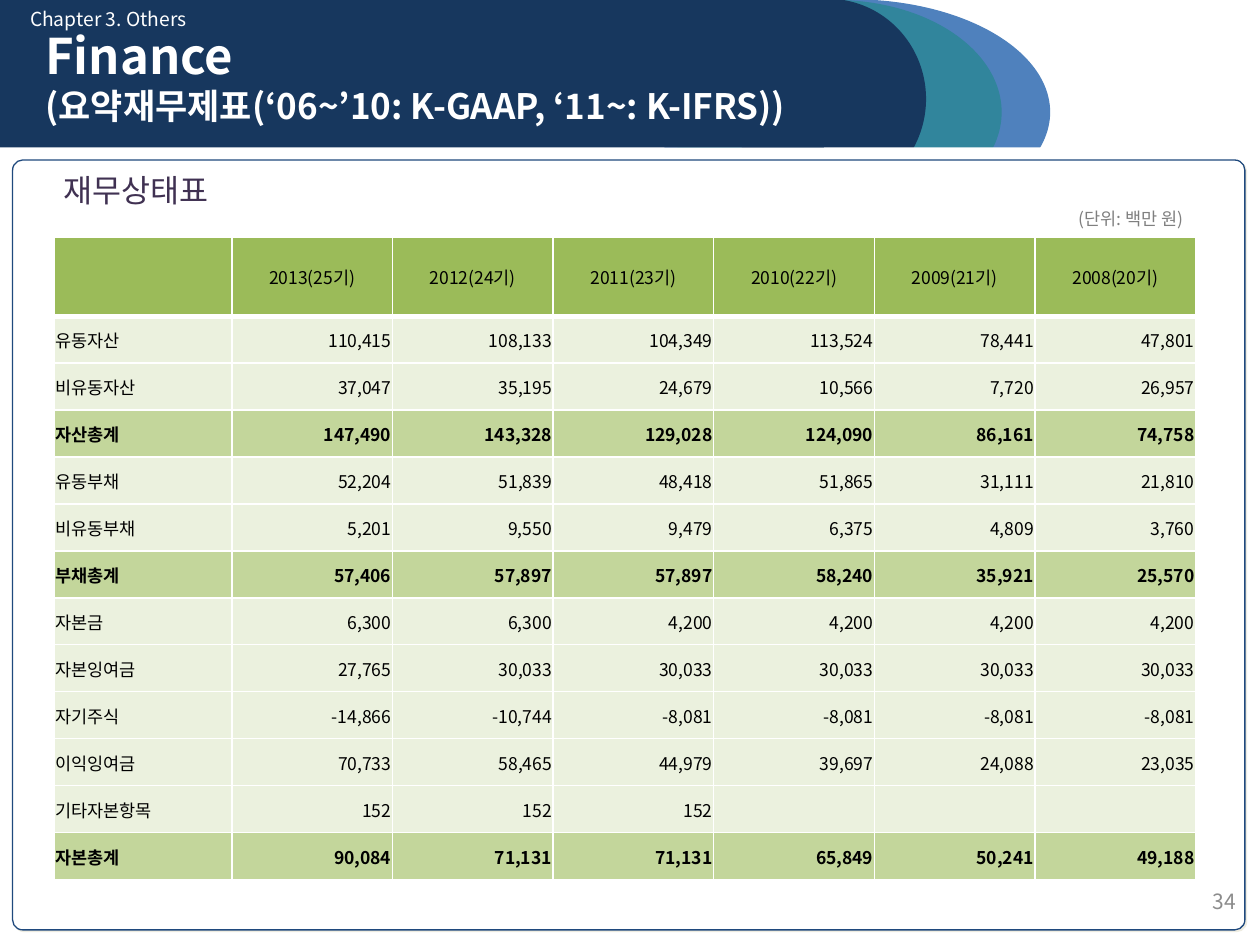
from typing import NamedTuple

from lxml.etree import SubElement
from pptx import Presentation
from pptx.dml.color import RGBColor
from pptx.enum.shapes import MSO_SHAPE as Shape
from pptx.enum.text import MSO_ANCHOR as Anchor, MSO_AUTO_SIZE as AutoSize, PP_ALIGN as Align
from pptx.oxml.ns import qn
from pptx.util import Inches, Pt

FONT = "Noto Sans CJK KR"
LABEL_FONT = "Arial"
COLORS = {
    "navy": "17375E", "teal": "31859C", "blue": "4F81BD", "frame": "1F497D",
    "shadow": "EEECE1", "white": "FFFFFF", "black": "000000", "purple": "403152",
    "gray": "7F7F7F", "page": "8C8C8C",
    "header": "9BBB59", "row": "EBF1DE", "total": "C3D69B",
}


class Box(NamedTuple):
    left: float
    top: float
    width: float
    height: float

    def lengths(self) -> list:
        return [Inches(value) for value in self]


class Panel(NamedTuple):
    kind: Shape
    box: Box
    fill: str
    line: str | None = None


class Run(NamedTuple):
    text: str
    size: float
    color: str = "black"
    bold: bool = False
    font: str = FONT


class Label(NamedTuple):
    box: Box
    run: Run
    align: Align = Align.LEFT
    anchor: Anchor = Anchor.TOP
    wrap: bool = True


BACKDROP = [
    Panel(Shape.OVAL, Box(5.2, 0, 3.13, 1.78), "blue", "blue"),
    Panel(Shape.OVAL, Box(5.31, 0, 2.64, 1.78), "teal"),
    Panel(Shape.OVAL, Box(5.79, -0.01, 1.56, 1.59), "navy"),
    Panel(Shape.RECTANGLE, Box(0, 1.17, 10, 0.93), "white"),
    Panel(Shape.RECTANGLE, Box(0, 0, 6.54, 1.17), "navy"),
]
FRAME = Panel(Shape.ROUNDED_RECTANGLE, Box(0.1, 1.27, 9.78, 6.11), "white", "frame")

TITLE_BOX = Box(0.26, 0.15, 7.87, 1.25)
TITLE_RUNS = [
    Run("Finance", 28, "white", True),
    Run("(요약재무제표(‘06~’10: K-GAAP, ‘11~: K-IFRS))", 20, "white", True),
]
LABELS = [
    Label(Box(0.41, 1.31, 1.46, 0.4), Run("재무상태표", 18, "purple"), wrap=False),
    Label(Box(7.58, 6.95, 2.33, 0.4), Run("34", 12, "page"), Align.RIGHT, Anchor.MIDDLE),
    Label(Box(0.14, 0.01, 3.6, 0.29), Run("Chapter 3. Others", 11, "white")),
]

TABLE_BOX = Box(0.43, 1.34, 9.06, 5.64)
LABEL_WIDTH, UNIT_HEIGHT, HEADER_HEIGHT = 1.41, 0.54, 0.63
UNIT = "(단위: 백만 원)"
HEADER = ["", *(f"{year}({year - 1988}기)" for year in range(2013, 2007, -1))]
BALANCE_SHEET = [
    ["유동자산", "110,415", "108,133", "104,349", "113,524", "78,441", "47,801"],
    ["비유동자산", "37,047", "35,195", "24,679", "10,566", "7,720", "26,957"],
    ["자산총계", "147,490", "143,328", "129,028", "124,090", "86,161", "74,758"],
    ["유동부채", "52,204", "51,839", "48,418", "51,865", "31,111", "21,810"],
    ["비유동부채", "5,201", "9,550", "9,479", "6,375", "4,809", "3,760"],
    ["부채총계", "57,406", "57,897", "57,897", "58,240", "35,921", "25,570"],
    ["자본금", "6,300", "6,300", "4,200", "4,200", "4,200", "4,200"],
    ["자본잉여금", "27,765", "30,033", "30,033", "30,033", "30,033", "30,033"],
    ["자기주식", "-14,866", "-10,744", "-8,081", "-8,081", "-8,081", "-8,081"],
    ["이익잉여금", "70,733", "58,465", "44,979", "39,697", "24,088", "23,035"],
    ["기타자본항목", "152", "152", "152", "", "", ""],
    ["자본총계", "90,084", "71,131", "71,131", "65,849", "50,241", "49,188"],
]


def rgb(name: str) -> RGBColor:
    return RGBColor.from_string(COLORS[name])


def write_run(paragraph, content: Run, align: Align) -> None:
    paragraph.alignment = align
    run = paragraph.add_run()
    run.text = content.text
    formats = {"name": content.font, "size": Pt(content.size), "bold": content.bold}
    for name, value in formats.items():
        setattr(run.font, name, value)
    run.font.color.rgb = rgb(content.color)
    SubElement(run.font._element, qn("a:ea"), typeface=FONT)


def draw_panel(slide, panel: Panel):
    shape = slide.shapes.add_shape(panel.kind, *panel.box.lengths())
    shape.shadow.inherit = False
    shape.fill.solid()
    shape.fill.fore_color.rgb = rgb(panel.fill)
    if panel.line:
        shape.line.color.rgb = rgb(panel.line)
        shape.line.width = Pt(0.75)
    else:
        shape.line.fill.background()
    return shape


def draw_frame(slide) -> None:
    frame = draw_panel(slide, FRAME)
    frame.adjustments[0] = 0.013
    effects = frame.element.spPr.find(qn("a:effectLst"))
    shadow = SubElement(effects, qn("a:outerShdw"), blurRad="0", dist=str(Pt(1.4)),
                        dir=str(45 * 60000), algn="ctr", rotWithShape="0")
    SubElement(shadow, qn("a:srgbClr"), val=COLORS["shadow"])


def draw_label(slide, label: Label) -> None:
    text_frame = slide.shapes.add_textbox(*label.box.lengths()).text_frame
    text_frame.word_wrap = label.wrap
    text_frame.vertical_anchor = label.anchor
    write_run(text_frame.paragraphs[0], label.run, label.align)


def draw_title(slide) -> None:
    title = slide.shapes.title
    title.element.getparent().append(title.element)  # in front of the header band
    for name, value in zip(("left", "top", "width", "height"), TITLE_BOX.lengths()):
        setattr(title, name, value)
    text_frame = title.text_frame
    formats = {"word_wrap": True, "auto_size": AutoSize.NONE, "vertical_anchor": Anchor.TOP}
    for name, value in formats.items():
        setattr(text_frame, name, value)
    write_run(text_frame.paragraphs[0], TITLE_RUNS[0], Align.LEFT)
    write_run(text_frame.add_paragraph(), TITLE_RUNS[1], Align.LEFT)


def add_borders(cell, top: float = 1, bottom: float = 1) -> None:
    properties = cell._tc.get_or_add_tcPr()
    for side, width in {"L": 1, "R": 1, "T": top, "B": bottom}.items():
        line = SubElement(properties, qn(f"a:ln{side}"), w=str(Pt(width)))
        fill = SubElement(line, qn("a:solidFill"))
        SubElement(fill, qn("a:srgbClr"), val=COLORS["white"])


def fill_cell(cell, content: Run, align: Align, fill: str) -> None:
    margins = {"margin_left": 0.01, "margin_right": 0.01, "margin_top": 0.01, "margin_bottom": 0}
    for name, value in margins.items():
        setattr(cell, name, Inches(value))
    cell.vertical_anchor = Anchor.MIDDLE
    cell.fill.solid()
    cell.fill.fore_color.rgb = rgb(fill)
    if content.text:
        write_run(cell.text_frame.paragraphs[0], content, align)


def draw_table(slide) -> None:
    row_count, column_count = len(BALANCE_SHEET) + 2, len(HEADER)
    table = slide.shapes.add_table(row_count, column_count, *TABLE_BOX.lengths()).table
    table.first_row = table.horz_banding = False
    value_width = (TABLE_BOX.width - LABEL_WIDTH) / (column_count - 1)
    for index, column in enumerate(table.columns):
        column.width = Inches(value_width if index else LABEL_WIDTH)
    body_height = (TABLE_BOX.height - UNIT_HEIGHT - HEADER_HEIGHT) / len(BALANCE_SHEET)
    heights = [UNIT_HEIGHT, HEADER_HEIGHT] + [body_height] * len(BALANCE_SHEET)
    for row, height in zip(table.rows, heights):
        row.height = Inches(height)

    # Unit note across the top
    for cell in table.rows[0].cells:
        add_borders(cell)
        cell.fill.background()
    unit_cell = table.cell(0, 0)
    unit_cell.merge(table.cell(0, column_count - 1))
    unit_cell.vertical_anchor = Anchor.BOTTOM
    write_run(unit_cell.text_frame.paragraphs[0], Run(UNIT, 10, "gray"), Align.RIGHT)

    # Years, then accounts with the totals emphasised
    for column, text in enumerate(HEADER):
        add_borders(table.cell(1, column), bottom=3)
        fill_cell(table.cell(1, column), Run(text, 10), Align.CENTER, "header")
    for row, values in enumerate(BALANCE_SHEET, start=2):
        is_total = values[0].endswith("총계")
        for column, text in enumerate(values):
            cell = table.cell(row, column)
            add_borders(cell, top=3 if row == 2 else 1)
            content = Run(text, 10, bold=is_total, font=FONT if column else LABEL_FONT)
            fill_cell(cell, content, Align.RIGHT if column else Align.LEFT,
                      "total" if is_total else "row")


def main() -> None:
    presentation = Presentation()
    presentation.slide_width, presentation.slide_height = Inches(10), Inches(7.5)
    slide = presentation.slides.add_slide(presentation.slide_layouts[5])
    for panel in BACKDROP:
        draw_panel(slide, panel)
    draw_frame(slide)
    draw_table(slide)
    draw_title(slide)
    for label in LABELS:
        draw_label(slide, label)
    presentation.save("out.pptx")


if __name__ == "__main__":
    main()
